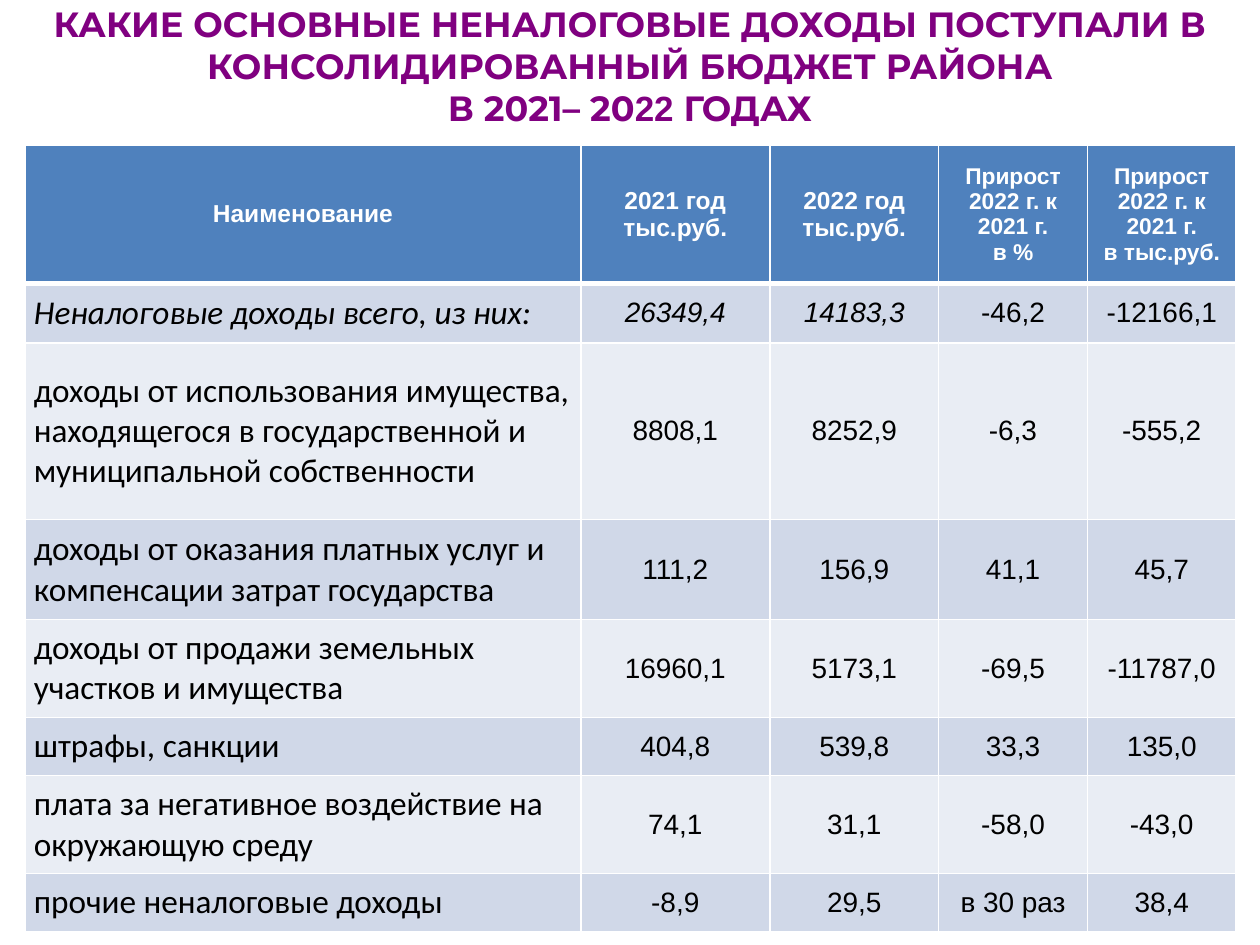
"""Build the slide on non-tax revenues of the district budget in 2021–2022."""
from lxml import etree
from pptx import Presentation
from pptx.dml.color import RGBColor
from pptx.enum import text
from pptx.oxml import ns
from pptx.util import Pt

COLORS = {"title": "800080", "header": "4F81BD", "odd": "D0D8E8",
          "even": "E9EDF4", "line": "FFFFFF", "head_text": "FFFFFF", "body": "000000"}

TITLE = [
    [("КАКИЕ ОСНОВНЫЕ НЕНАЛОГОВЫЕ ДОХОДЫ ПОСТУПАЛИ В", "Montserrat")],
    [("КОНСОЛИДИРОВАННЫЙ БЮДЖЕТ РАЙОНА", "Montserrat")],
    [("В 2021– 20", "Montserrat"), ("22 ", "Arial"), ("ГОДАХ", "Montserrat")],
]
REVENUES = [
    ("Наименование", "2021 год\nтыс.руб.", "2022 год\nтыс.руб.",
     "Прирост\n2022 г. к 2021 г.\nв %", "Прирост\n2022 г. к 2021 г.\nв тыс.руб."),
    ("Неналоговые доходы всего, из них:", "26349,4", "14183,3", "-46,2", "-12166,1"),
    ("доходы от использования имущества, находящегося в государственной "
     "и муниципальной собственности", "8808,1", "8252,9", "-6,3", "-555,2"),
    ("доходы от оказания платных услуг и компенсации затрат государства",
     "111,2", "156,9", "41,1", "45,7"),
    ("доходы от продажи земельных участков и имущества",
     "16960,1", "5173,1", "-69,5", "-11787,0"),
    ("штрафы, санкции", "404,8", "539,8", "33,3", "135,0"),
    ("плата за негативное воздействие на окружающую среду",
     "74,1", "31,1", "-58,0", "-43,0"),
    ("прочие неналоговые доходы", "-8,9", "29,5", "в 30 раз", "38,4"),
]
COLUMN_WIDTHS = [317.5, 108, 96.5, 85, 85]
ROW_HEIGHTS = [79, 34, 101, 57, 55.5, 32.5, 55.5, 32.5]
TOTAL_ROW = 1


def style(font, name, size, color, bold=False, italic=False):
    font.name, font.size, font.bold, font.italic = name, Pt(size), bold, italic
    font.color.rgb = RGBColor.from_string(COLORS[color])


def add_borders(cell, top, bottom):
    properties = cell._tc.get_or_add_tcPr()
    for position, (side, width) in enumerate(
            [("lnL", 1), ("lnR", 1), ("lnT", top), ("lnB", bottom)]):
        line = etree.Element(ns.qn(f"a:{side}"), w=str(Pt(width)))
        fill = etree.SubElement(line, ns.qn("a:solidFill"))
        etree.SubElement(fill, ns.qn("a:srgbClr"), val=COLORS["line"])
        properties.insert(position, line)


def cell_style(row, column):
    if row == 0:
        return "Arial", 14 if column < 3 else 13, "head_text", True
    italic = row == TOTAL_ROW and column < 3
    name, size = ("Calibri", 19) if column == 0 else ("Arial", 16)
    return name, size, "body", False, italic


def fill_cell(cell, content, row, column):
    cell.text_frame.text = content
    cell.vertical_anchor = text.MSO_ANCHOR.MIDDLE
    is_label = row > 0 and column == 0
    if is_label:
        cell.margin_left = cell.margin_right = Pt(5)
        cell.margin_top = cell.margin_bottom = Pt(5)
    for paragraph in cell.text_frame.paragraphs:
        paragraph.alignment = text.PP_ALIGN.LEFT if is_label else text.PP_ALIGN.CENTER
        for run in paragraph.runs:
            style(run.font, *cell_style(row, column))
    band = "header" if row == 0 else "odd" if row % 2 else "even"
    cell.fill.solid()
    cell.fill.fore_color.rgb = RGBColor.from_string(COLORS[band])
    add_borders(cell, 3 if row == 1 else 1, 3 if row == 0 else 1)


def add_revenues(slide):
    revenues = slide.shapes.add_table(
        len(ROW_HEIGHTS), len(COLUMN_WIDTHS), Pt(14.4), Pt(83),
        Pt(sum(COLUMN_WIDTHS)), Pt(sum(ROW_HEIGHTS))).table
    for column, width in zip(revenues.columns, COLUMN_WIDTHS):
        column.width = Pt(width)
    for row, height in zip(revenues.rows, ROW_HEIGHTS):
        row.height = Pt(height)
    for r, values in enumerate(REVENUES):
        for c, value in enumerate(values):
            fill_cell(revenues.cell(r, c), value, r, c)


def add_title(slide):
    title = slide.shapes.add_textbox(Pt(0), Pt(-2), Pt(720), Pt(79)).text_frame
    title.word_wrap = True
    for index, pieces in enumerate(TITLE):
        line = title.add_paragraph() if index else title.paragraphs[0]
        line.alignment = text.PP_ALIGN.CENTER
        for piece, font_name in pieces:
            run = line.add_run()
            run.text = piece
            style(run.font, font_name, 20, "title", bold=True)


def main():
    deck = Presentation()
    deck.slide_width, deck.slide_height = Pt(720), Pt(540)
    slide = deck.slides.add_slide(deck.slide_layouts[6])
    add_revenues(slide)
    add_title(slide)
    deck.save("out.pptx")


if __name__ == "__main__":
    main()
